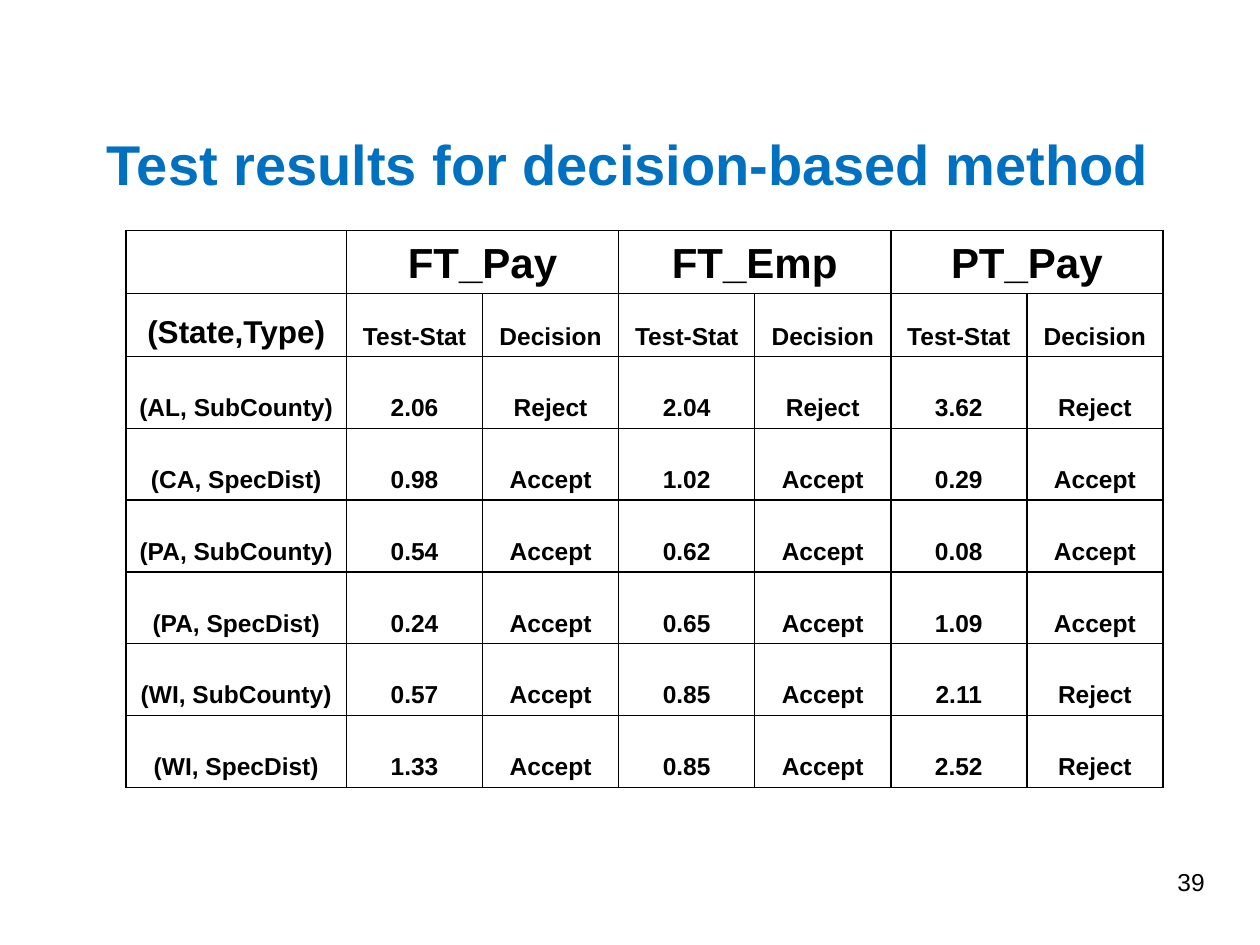
from pptx import Presentation
from pptx.dml.color import RGBColor
from pptx.enum.text import MSO_ANCHOR, PP_ALIGN
from pptx.oxml.ns import qn
from pptx.util import Inches, Pt
from lxml.etree import SubElement

BLACK = RGBColor(0x00, 0x00, 0x00)
BLUE = RGBColor(0x00, 0x70, 0xC0)
FONT = "Arial"

COL_WIDTHS = [1.75] + [1.08] * 6
ROW_HEIGHTS = [0.47, 0.5] + [0.57] * 6
MEASURES = ["FT_Pay", "FT_Emp", "PT_Pay"]
RESULTS = [
    ["(AL, SubCounty)", "2.06", "Reject", "2.04", "Reject", "3.62", "Reject"],
    ["(CA, SpecDist)", "0.98", "Accept", "1.02", "Accept", "0.29", "Accept"],
    ["(PA, SubCounty)", "0.54", "Accept", "0.62", "Accept", "0.08", "Accept"],
    ["(PA, SpecDist)", "0.24", "Accept", "0.65", "Accept", "1.09", "Accept"],
    ["(WI, SubCounty)", "0.57", "Accept", "0.85", "Accept", "2.11", "Reject"],
    ["(WI, SpecDist)", "1.33", "Accept", "0.85", "Accept", "2.52", "Reject"],
]


def set_text(p, text, size, color=BLACK, bold=False, align=PP_ALIGN.LEFT):
    p.text = text
    p.alignment = align
    p.font.name = FONT
    p.font.size = Pt(size)
    p.font.bold = bold
    p.font.color.rgb = color


def add_text(s, box, text, size, anchor=MSO_ANCHOR.TOP, **style):
    tf = s.shapes.add_textbox(*[Inches(v) for v in box]).text_frame
    tf.word_wrap = True
    tf.vertical_anchor = anchor
    set_text(tf.paragraphs[0], text, size, **style)


def set_borders(cell):
    tcPr = cell._tc.get_or_add_tcPr()
    for side in ("a:lnL", "a:lnR", "a:lnT", "a:lnB"):
        ln = SubElement(tcPr, qn(side), w=str(Pt(1)))
        fill = SubElement(ln, qn("a:solidFill"))
        SubElement(fill, qn("a:srgbClr"), val=str(BLACK))


def fill_cell(cell, text, size):
    cell.vertical_anchor = MSO_ANCHOR.BOTTOM
    p = cell.text_frame.paragraphs[0]
    set_text(p, text, size, bold=True, align=PP_ALIGN.CENTER)
    # Hanging indent
    pPr = p._p.get_or_add_pPr()
    pPr.set("marL", str(Inches(0.38)))
    pPr.set("indent", str(Inches(-0.38)))


def add_results_table(s):
    table = s.shapes.add_table(
        len(ROW_HEIGHTS), len(COL_WIDTHS), Inches(1), Inches(1.83),
        Inches(sum(COL_WIDTHS)), Inches(sum(ROW_HEIGHTS))).table
    table.first_row = table.horz_banding = False
    for col, width in zip(table.columns, COL_WIDTHS):
        col.width = Inches(width)
    for row, height in zip(table.rows, ROW_HEIGHTS):
        row.height = Inches(height)
    for cell in table.iter_cells():
        set_borders(cell)
        cell.fill.background()

    # Measure names, each over two columns
    for i, name in enumerate(MEASURES):
        col = 1 + 2 * i
        table.cell(0, col).merge(table.cell(0, col + 1))
        fill_cell(table.cell(0, col), name, 24)

    # Column headings and results
    headings = ["(State,Type)"] + ["Test-Stat", "Decision"] * len(MEASURES)
    for r, values in enumerate([headings] + RESULTS, start=1):
        for c, value in enumerate(values):
            fill_cell(table.cell(r, c), value, 18 if (r, c) == (1, 0) else 14)


def main():
    prs = Presentation()
    prs.slide_width, prs.slide_height = Inches(10), Inches(7.5)
    s = prs.slides.add_slide(prs.slide_layouts[6])

    # Page number
    add_text(s, (7.58, 6.83, 2.08, 0.5), "39", 14, align=PP_ALIGN.RIGHT)
    # Title
    add_text(s, (0.75, 0.67, 8.5, 1.25), "Test results for decision-based method",
             32, anchor=MSO_ANCHOR.MIDDLE, color=BLUE, bold=True)
    # Test results
    add_results_table(s)

    prs.save("out.pptx")


if __name__ == "__main__":
    main()
